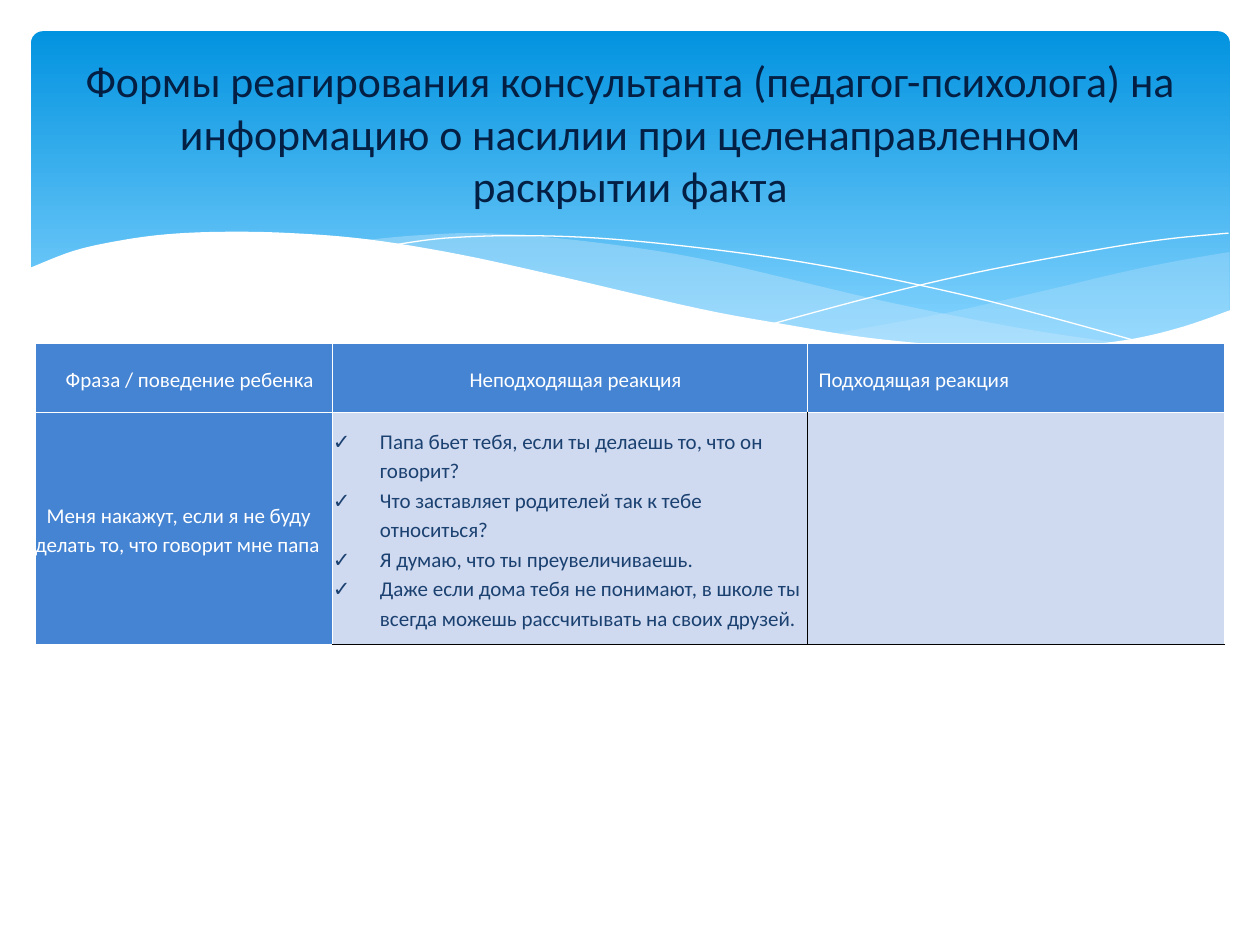
from lxml import etree
from pptx import Presentation
from pptx.dml.color import RGBColor
from pptx.enum.shapes import MSO_SHAPE
from pptx.enum.text import MSO_ANCHOR, PP_ALIGN
from pptx.oxml.ns import qn
from pptx.util import Cm, Pt

FONT = "Calibri"
WHITE = RGBColor(0xFF, 0xFF, 0xFF)
BLACK = RGBColor(0x00, 0x00, 0x00)
NAVY = RGBColor(0x04, 0x1F, 0x44)
DARK_BLUE = RGBColor(0x1B, 0x41, 0x71)
BLUE = RGBColor(0x45, 0x84, 0xD3)
PALE_BLUE = RGBColor(0xCF, 0xD9, 0xEF)
SKY_TOP = RGBColor(0x02, 0x93, 0xE0)
SKY_BOTTOM = RGBColor(0x83, 0xD3, 0xFE)
MIST = RGBColor(0xC6, 0xE7, 0xFC)
LEFT, CENTER = PP_ALIGN.LEFT, PP_ALIGN.CENTER

TITLE = ("Формы реагирования консультанта (педагог-психолога) на "
         "информацию о насилии при целенаправленном раскрытии факта")
HEADERS = [("Фраза / поведение ребенка", CENTER),
           ("Неподходящая реакция", CENTER),
           ("Подходящая реакция", LEFT)]
CHILD_PHRASE = "Меня накажут, если я не буду делать то, что говорит мне папа"
WRONG_REACTIONS = [
    "Папа бьет тебя, если ты делаешь то, что он говорит?",
    "Что заставляет родителей так к тебе относиться?",
    "Я думаю, что ты преувеличиваешь.",
    "Даже если дома тебя не понимают, в школе ты всегда можешь "
    "рассчитывать на своих друзей.",
]
COLUMN_WIDTHS = [Cm(6), Cm(9.56), Cm(8.42)]
ROW_HEIGHTS = [Cm(1.39), Cm(4.68)]
BORDER_WIDTH = Pt(0.5)

# Wave edges: key points in units of 2.54 cm, joined by smooth curves
WAVE_UNIT = Cm(2.54)
CURVE_STEPS = 6
RIGHT_WAVE = [
    [(9.76, 2), (9.35, 2.07), (8.91, 2.16), (8.32, 2.3), (7.53, 2.48), (6.61, 2.65)],
    [(6.61, 2.65), (7.19, 2.72), (7.69, 2.77), (8.14, 2.78), (8.63, 2.75),
     (9.05, 2.69), (9.42, 2.59), (9.76, 2.47)],
]
MIDDLE_WAVE = [
    [(8.93, 2.73), (8.07, 2.6), (7.06, 2.4), (6.29, 2.22), (5.69, 2.08),
     (5.14, 1.98), (4.42, 1.89), (3.8, 1.85), (3.28, 1.87), (2.86, 1.91)],
    [(2.86, 1.91), (3.62, 2.03), (4.49, 2.22), (5.3, 2.4), (6.01, 2.55),
     (6.65, 2.66), (7.22, 2.74), (7.73, 2.77), (8.18, 2.78), (8.57, 2.77),
     (8.93, 2.73)],
]
FRONT_WAVE = [
    [(9.77, 2.46), (9.4, 2.59), (8.99, 2.69), (8.5, 2.75), (8.09, 2.77),
     (7.61, 2.75), (6.88, 2.68), (6.26, 2.58), (5.55, 2.45), (4.47, 2.2),
     (3.65, 2.02), (2.92, 1.9), (2.3, 1.85), (1.77, 1.84), (1.32, 1.86),
     (0.95, 1.91), (0.59, 1.99), (0.23, 2.13)],
    [(0.23, 3.29), (9.77, 3.29)],
]
FALLING_LINE = [[(3.09, 1.95), (3.53, 1.89), (4.16, 1.87), (4.89, 1.9), (5.82, 2),
                 (6.65, 2.13), (7.6, 2.33), (8.31, 2.51), (9.07, 2.72)]]
RISING_LINE = [[(6.13, 2.57), (6.95, 2.35), (7.76, 2.16), (8.66, 1.99),
                (9.24, 1.9), (9.75, 1.85)]]


def smooth(points):
    """Return points along a Catmull-Rom curve through the key points."""
    padded = [points[0], *points, points[-1]]
    curve = [points[0]]
    for a, b, c, d in zip(padded, padded[1:], padded[2:], padded[3:]):
        for step in range(1, CURVE_STEPS + 1):
            t = step / CURVE_STEPS
            curve.append(tuple(
                q + t / 2 * (r - p + t * (2 * p - 5 * q + 4 * r - s
                                          + t * (3 * (q - r) + s - p)))
                for p, q, r, s in zip(a, b, c, d)))
    return curve


def add_curve(slide, edges, closed):
    points = [(round(x * WAVE_UNIT), round(y * WAVE_UNIT))
              for edge in edges for x, y in smooth(edge)]
    builder = slide.shapes.build_freeform(*points[0])
    builder.add_line_segments(points[1:], close=closed)
    shape = builder.convert_to_shape()
    shape.shadow.inherit = False
    return shape


def add_wave(slide, edges, color, opacity=100):
    shape = add_curve(slide, edges, True)
    shape.line.fill.background()
    shape.fill.solid()
    shape.fill.fore_color.rgb = color
    if opacity < 100:
        color_element = shape.element.spPr.find(qn("a:solidFill"))[0]
        etree.SubElement(color_element, qn("a:alpha"), val=str(opacity * 1000))


def add_wave_line(slide, edges):
    shape = add_curve(slide, edges, False)
    shape.fill.background()
    shape.line.color.rgb = WHITE
    shape.line.width = Pt(0)


def add_banner(slide):
    banner = slide.shapes.add_shape(
        MSO_SHAPE.ROUNDED_RECTANGLE, Cm(0.63), Cm(0.63), Cm(24.16), Cm(6.86))
    banner.adjustments[0] = 0.034
    banner.shadow.inherit = False
    banner.line.fill.background()
    banner.fill.gradient()
    banner.fill.gradient_angle = 270
    stops = [(0, SKY_TOP), (0.9, SKY_BOTTOM)]
    for stop, (position, color) in zip(banner.fill.gradient_stops, stops):
        stop.position = position
        stop.color.rgb = color


def style_font(paragraph, size, color):
    paragraph.font.name = FONT
    paragraph.font.size = Pt(size)
    paragraph.font.color.rgb = color


def add_title(slide):
    box = slide.shapes.add_textbox(Cm(1.38), Cm(0.94), Cm(22.64), Cm(3.48))
    frame = box.text_frame
    frame.word_wrap = True
    frame.vertical_anchor = MSO_ANCHOR.MIDDLE
    paragraph = frame.paragraphs[0]
    paragraph.text = TITLE
    paragraph.alignment = CENTER
    style_font(paragraph, 25, NAVY)


def style_cell(cell, fill, right=WHITE, bottom=WHITE, left=WHITE):
    properties = cell._tc.get_or_add_tcPr()
    sides = {"a:lnL": left, "a:lnR": right, "a:lnT": WHITE, "a:lnB": bottom}
    for tag, color in sides.items():
        line = etree.SubElement(properties, qn(tag), w=str(BORDER_WIDTH))
        solid = etree.SubElement(line, qn("a:solidFill"))
        etree.SubElement(solid, qn("a:srgbClr"), val=str(color))
    cell.fill.solid()
    cell.fill.fore_color.rgb = fill
    cell.vertical_anchor = MSO_ANCHOR.MIDDLE
    cell.margin_left = cell.margin_right = cell.margin_top = cell.margin_bottom = 0


def write_cell(cell, lines, color=WHITE, alignment=LEFT, bullet=None):
    cell.text = "\n".join(lines)
    for paragraph in cell.text_frame.paragraphs:
        paragraph.alignment = alignment
        paragraph.line_spacing = 1.15
        style_font(paragraph, 12, color)
        properties = paragraph._p.get_or_add_pPr()
        margin, indent = (Cm(0.95), -Cm(0.95)) if bullet else (0, Cm(0.23))
        properties.set("marL", str(margin))
        properties.set("indent", str(indent))
        if bullet:
            run_defaults = properties.find(qn("a:defRPr"))
            run_defaults.addprevious(etree.Element(qn("a:buFont"), typeface=FONT))
            run_defaults.addprevious(etree.Element(qn("a:buChar"), char=bullet))


def add_reaction_table(slide):
    table = slide.shapes.add_table(
        len(ROW_HEIGHTS), len(COLUMN_WIDTHS), Cm(0.71), Cm(6.93),
        sum(COLUMN_WIDTHS), sum(ROW_HEIGHTS)).table
    for column, width in zip(table.columns, COLUMN_WIDTHS):
        column.width = width
    for row, height in zip(table.rows, ROW_HEIGHTS):
        row.height = height
    for index, (text, alignment) in enumerate(HEADERS):
        style_cell(table.cell(0, index), BLUE)
        write_cell(table.cell(0, index), [text], alignment=alignment)
    phrase, wrong, suitable = (table.cell(1, index) for index in range(3))
    style_cell(phrase, BLUE)
    write_cell(phrase, [CHILD_PHRASE])
    style_cell(wrong, PALE_BLUE, right=BLACK, bottom=BLACK)
    write_cell(wrong, WRONG_REACTIONS, DARK_BLUE, bullet="✓")
    style_cell(suitable, PALE_BLUE, bottom=BLACK, left=BLACK)


def main():
    presentation = Presentation()
    presentation.slide_width, presentation.slide_height = Cm(25.4), Cm(19.05)
    slide = presentation.slides.add_slide(presentation.slide_layouts[6])
    add_banner(slide)
    add_wave(slide, RIGHT_WAVE, MIST, 29)
    add_wave(slide, MIDDLE_WAVE, MIST, 40)
    add_wave_line(slide, FALLING_LINE)
    add_wave_line(slide, RISING_LINE)
    add_wave(slide, FRONT_WAVE, WHITE)
    add_title(slide)
    add_reaction_table(slide)
    presentation.save("out.pptx")


if __name__ == "__main__":
    main()
